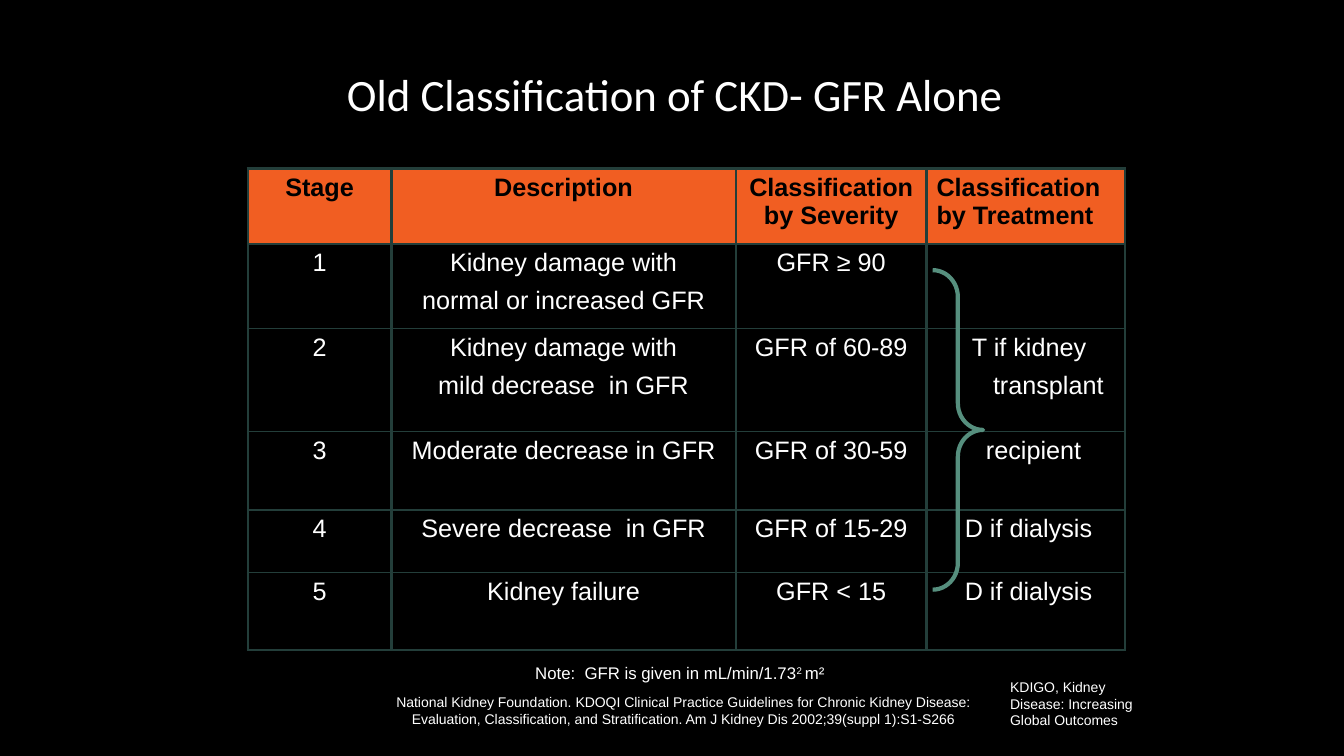
from lxml import etree
from pptx import Presentation
from pptx import util as u
from pptx.dml import color
from pptx.enum import shapes, text
from pptx.oxml import ns

COLORS = {"black": "000000", "white": "FFFFFF", "orange": "F15E22",
          "grid": "233E3A", "brace": "568F7E"}
CENTER, LEFT = text.PP_ALIGN.CENTER, text.PP_ALIGN.LEFT


def rgb(name):
    return color.RGBColor.from_string(COLORS[name])


def write(frame, lines, align, ink, **font_format):
    for i, line in enumerate(lines):
        paragraph = frame.paragraphs[0] if i == 0 else frame.add_paragraph()
        paragraph.alignment = align
        run = paragraph.add_run()
        run.text = line
        for key, value in font_format.items():
            setattr(run.font, key, value)
        run.font.color.rgb = rgb(ink)


prs = Presentation()
prs.slide_width, prs.slide_height = u.Inches(13.33), u.Inches(7.5)
slide = prs.slides.add_slide(prs.slide_layouts[5])
slide.background.fill.solid()
slide.background.fill.fore_color.rgb = rgb("black")

heading = slide.shapes.title
title_place = {"left": 2.05, "top": 0.61, "width": 9.29, "height": 0.64}
for key, value in title_place.items():
    setattr(heading, key, u.Inches(value))
write(heading.text_frame, ["Old Classification of CKD- GFR Alone"], CENTER,
      "white", size=u.Pt(32), name="Calibri")

column_widths = [1.42, 3.42, 1.89, 1.97]
row_heights = [0.75, 0.84, 1.02, 0.78, 0.62, 0.77]
stage_rows = [
    [["Stage"], ["Description"], ["Classification by Severity"],
     ["Classification by Treatment"]],
    [["1"], ["Kidney damage with", "normal or increased GFR"], ["GFR ≥ 90"], []],
    [["2"], ["Kidney damage with", "mild decrease  in GFR"], ["GFR of 60-89"],
     ["T if kidney", "transplant"]],
    [["3"], ["Moderate decrease in GFR"], ["GFR of 30-59"], ["recipient"]],
    [["4"], ["Severe decrease  in GFR"], ["GFR of 15-29"], ["D if dialysis"]],
    [["5"], ["Kidney failure"], ["GFR < 15"], ["D if dialysis"]],
]
treatment_indents = {"T if kidney": 0.35, "transplant": 0.56,
                     "recipient": 0.49, "D if dialysis": 0.28}

stages = slide.shapes.add_table(
    len(row_heights), len(column_widths), u.Inches(2.46), u.Inches(1.67),
    u.Inches(sum(column_widths)), u.Inches(sum(row_heights))).table
stages.first_row = stages.horz_banding = False
for column, width in zip(stages.columns, column_widths):
    column.width = u.Inches(width)
for row, height in zip(stages.rows, row_heights):
    row.height = u.Inches(height)

for r, entries in enumerate(stage_rows):
    is_header = r == 0
    border_widths = {"lnL": 2.25, "lnR": 2.25,
                     "lnT": 2.25 if is_header else 1, "lnB": 1}
    for c, lines in enumerate(entries):
        cell = stages.cell(r, c)
        properties = cell._tc.get_or_add_tcPr()
        for side, width in border_widths.items():
            border = etree.SubElement(properties, ns.qn("a:" + side), w=str(u.Pt(width)))
            paint = etree.SubElement(border, ns.qn("a:solidFill"))
            etree.SubElement(paint, ns.qn("a:srgbClr"), val=COLORS["grid"])
        if is_header:
            cell.fill.solid()
            cell.fill.fore_color.rgb = rgb("orange")
        else:
            cell.fill.background()
        write(cell.text_frame, lines, LEFT if c == 3 else CENTER,
              "black" if is_header else "white",
              size=u.Pt(18), name="Arial", bold=is_header)
        for i, paragraph in enumerate(cell.text_frame.paragraphs):
            if i:
                paragraph.space_before = u.Pt(7)
            if paragraph.text in treatment_indents:
                indent = u.Inches(treatment_indents[paragraph.text])
                paragraph._p.get_or_add_pPr().set("marL", str(indent))

brace = slide.shapes.add_shape(shapes.MSO_SHAPE.LEFT_BRACE, u.Inches(9.25),
                               u.Inches(2.68), u.Inches(0.5), u.Inches(3.17))
brace.rotation = 180
brace.adjustments[0] = 0.53
brace.shadow.inherit = False
brace.fill.background()
brace.line.color.rgb = rgb("brace")
brace.line.width = u.Pt(3)

footnotes = [
    ((5.21, 6.53, 3.15, 0.3), ["Note:  GFR is given in mL/min/1.73"], LEFT, 12, False),
    ((3.8, 6.83, 5.95, 0.67),
     ["National Kidney Foundation. KDOQI Clinical Practice Guidelines for Chronic Kidney Disease:",
      "Evaluation, Classification, and Stratification. Am J Kidney Dis 2002;39(suppl 1):S1-S266"],
     CENTER, 10, False),
    ((9.92, 6.68, 1.62, 0.61), ["KDIGO, Kidney Disease: Increasing Global Outcomes"],
     LEFT, 10, True),
]
for place, lines, align, size, wrap in footnotes:
    footnote = slide.shapes.add_textbox(*map(u.Inches, place)).text_frame
    footnote.word_wrap = wrap
    write(footnote, lines, align, "white", size=u.Pt(size), name="Arial")
    if lines[0].startswith("Note:"):
        for unit, baseline in (("2 ", "30000"), ("m²", "0")):
            run = footnote.paragraphs[0].add_run()
            run.text = unit
            run.font.size, run.font.name = u.Pt(size), "Arial"
            run.font.color.rgb = rgb("white")
            run._r.get_or_add_rPr().set("baseline", baseline)

prs.save("out.pptx")
